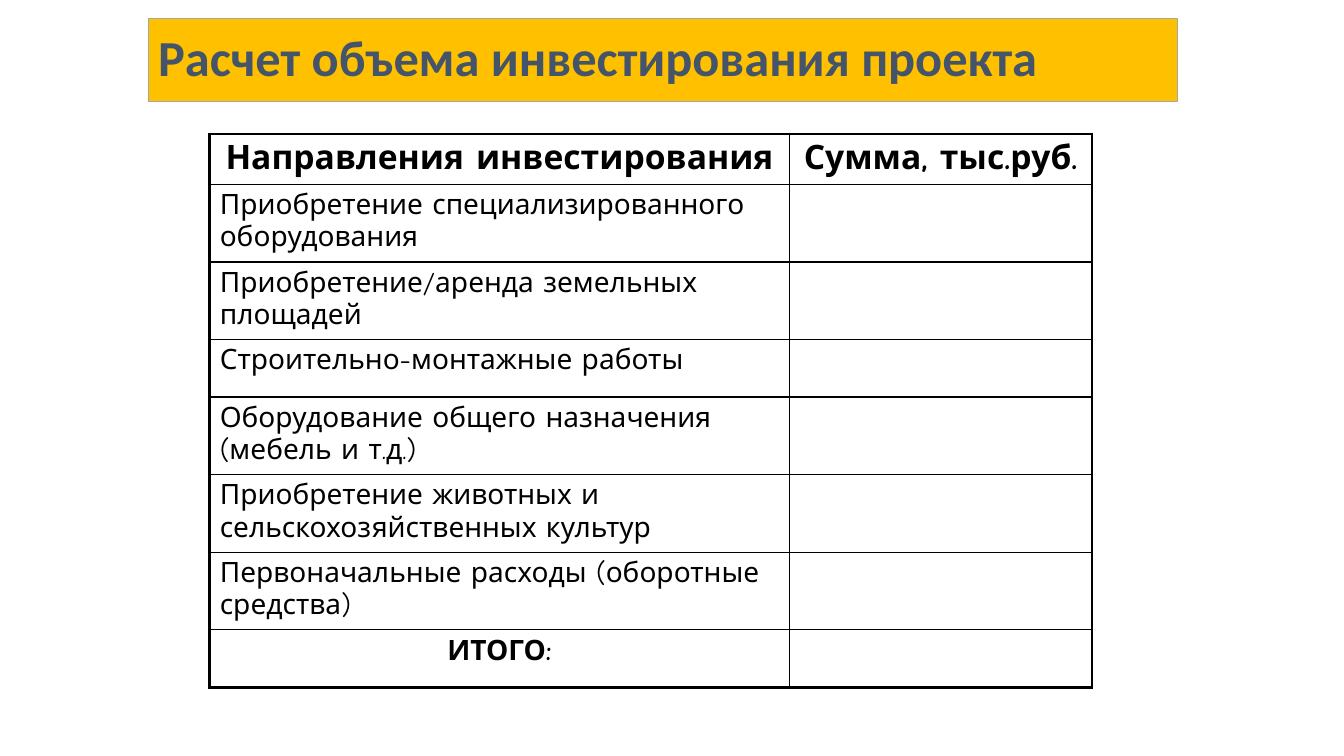
"""Build a slide with a table of investment directions and their amounts."""
from lxml import etree
from pptx import Presentation
from pptx import util as u
from pptx.dml.color import RGBColor
from pptx.enum import shapes, text
from pptx.oxml.ns import qn


def color(hex_string):
    return RGBColor.from_string(hex_string)


def add_border(cell, side, points):
    line = etree.SubElement(cell._tc.get_or_add_tcPr(), qn("a:ln" + side), w=str(u.Pt(points)))
    fill = etree.SubElement(line, qn("a:solidFill"))
    etree.SubElement(fill, qn("a:srgbClr"), val="000000")


presentation = Presentation()
presentation.slide_width = u.Inches(13.33)
presentation.slide_height = u.Inches(7.5)
slide = presentation.slides.add_slide(presentation.slide_layouts[6])

title = slide.shapes.add_shape(
    shapes.MSO_SHAPE.RECTANGLE, u.Inches(1.47), u.Inches(0.18), u.Inches(10.21), u.Inches(0.83))
title.shadow.inherit = False
title.fill.solid()
title.fill.fore_color.rgb = color("FFC000")
title.line.color.rgb = color("A5A5A5")
title.line.width = u.Pt(0.5)
title.text_frame.word_wrap = True
title.text_frame.vertical_anchor = text.MSO_ANCHOR.MIDDLE
paragraph = title.text_frame.paragraphs[0]
paragraph.alignment = text.PP_ALIGN.LEFT
paragraph.line_spacing = 0.9
run = paragraph.add_run()
run.text = "Расчет объема инвестирования проекта"
run.font.name = "Calibri"
run.font.size = u.Pt(36)
run.font.bold = True
run.font.color.rgb = color("44546A")

rows = [
    ("Направления инвестирования", "Сумма, тыс.руб."),
    ("Приобретение специализированного оборудования", ""),
    ("Приобретение/аренда земельных площадей", ""),
    ("Строительно-монтажные работы", ""),
    ("Оборудование общего назначения (мебель и т.д.)", ""),
    ("Приобретение животных и сельскохозяйственных культур", ""),
    ("Первоначальные расходы (оборотные средства)", ""),
    ("ИТОГО:", ""),
]
column_widths = [5.75, 3]
row_heights = [0.5, 0.77, 0.77, 0.57, 0.77, 0.77, 0.77, 0.57]
last_row = len(rows) - 1
last_column = len(column_widths) - 1

table = slide.shapes.add_table(
    len(rows), len(column_widths), u.Inches(2.08), u.Inches(1.33),
    u.Inches(sum(column_widths)), u.Inches(sum(row_heights))).table
table.first_row = False
table.horz_banding = False
for column, width in zip(table.columns, column_widths):
    column.width = u.Inches(width)

for row_index, (labels, height) in enumerate(zip(rows, row_heights)):
    table.rows[row_index].height = u.Inches(height)
    emphasized = row_index in (0, last_row)
    for column_index, label in enumerate(labels):
        cell = table.cell(row_index, column_index)
        outer_sides = {
            "L": column_index == 0,
            "R": column_index == last_column,
            "T": row_index == 0,
            "B": row_index == last_row,
        }
        for side, is_outer in outer_sides.items():
            add_border(cell, side, 2.25 if is_outer else 1)
        cell.fill.solid()
        cell.fill.fore_color.rgb = color("FFFFFF")
        if label:
            paragraph = cell.text_frame.paragraphs[0]
            paragraph.alignment = text.PP_ALIGN.CENTER if emphasized else text.PP_ALIGN.LEFT
            run = paragraph.add_run()
            run.text = label
            run.font.name = "Comic Neue"
            run.font.size = u.Pt(24 if row_index == 0 else 20)
            run.font.bold = emphasized
            run.font.color.rgb = color("000000")

presentation.save("out.pptx")
